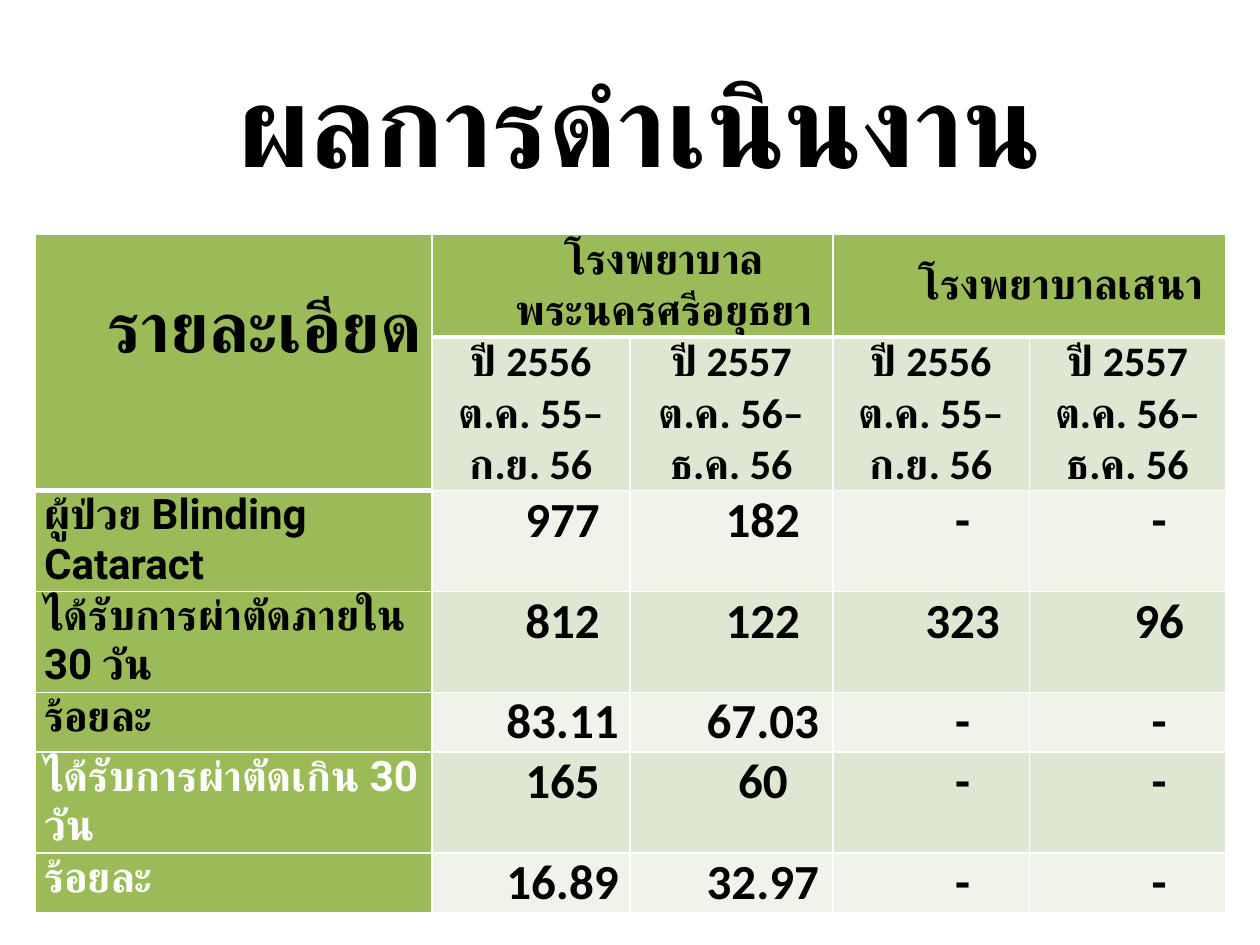
from lxml.etree import SubElement
from pptx import Presentation
from pptx.dml.color import RGBColor
from pptx.enum.text import MSO_ANCHOR, MSO_AUTO_SIZE, PP_ALIGN
from pptx.oxml.ns import qn
from pptx.util import Inches, Pt

COLORS = {"ink": "000000", "white": "FFFFFF", "header": "9BBB59",
          "band_dark": "DEE7D1", "band_light": "EFF3EA"}
INDENT = 0.5
COLUMNS = [3.15, 1.57, 1.61, 1.56, 1.56]
ROWS = [0.79, 1.2, 0.8, 0.8, 0.47, 0.8, 0.47]

HEADING = {"size": 24, "indent": INDENT, "fill": "header"}
PERIOD = {"size": 24, "fill": "band_dark"}
LABEL = {"size": 24, "font": "Roboto", "align": PP_ALIGN.LEFT, "fill": "header"}
VALUE = {"size": 28, "indent": INDENT}

PERIODS = [["ปี 2556", "ต.ค. 55–ก.ย. 56"], ["ปี 2557", "ต.ค. 56–ธ.ค. 56"]] * 2
RESULTS = [
    ("ผู้ป่วย Blinding Cataract", "ink", ["977", "182", "-", "-"]),
    ("ได้รับการผ่าตัดภายใน 30 วัน", "ink", ["812", "122", "323", "96"]),
    ("ร้อยละ", "ink", ["83.11", "67.03", "-", "-"]),
    ("ได้รับการผ่าตัดเกิน 30 วัน", "white", ["165", "60", "-", "-"]),
    ("ร้อยละ", "white", ["16.89", "32.97", "-", "-"]),
]


def rgb(name):
    return RGBColor.from_string(COLORS[name])


def rule_below(row, column):
    """Width in points of the line under a cell; headers end in a heavy one."""
    return 3 if row == (1 if column == 0 else 0) else 1


class SlideBuilder:
    def __init__(self, deck):
        self.deck = deck
        self.slide = deck.slides.add_slide(deck.slide_layouts[5])

    def set_text(self, frame, lines, size, font="Calibri", color="ink",
                 align=PP_ALIGN.CENTER, indent=0):
        frame.text = "\n".join(lines)
        for paragraph in frame.paragraphs:
            paragraph.alignment = align
            properties = paragraph._p.get_or_add_pPr()
            properties.set("marL", str(Inches(indent)))
            properties.set("indent", "0")
            for run in paragraph.runs:
                for name, value in {"size": Pt(size), "bold": True, "name": font}.items():
                    setattr(run.font, name, value)
                run.font.color.rgb = rgb(color)
                # Thai letters take the complex-script typeface
                SubElement(run._r.get_or_add_rPr(), qn("a:cs"), typeface=font)

    def title(self, text, left, top, width, height, **style):
        """Place the title; lengths are shares of the slide."""
        heading = self.slide.shapes.title
        w, h = self.deck.slide_width, self.deck.slide_height
        place = {"left": left * w, "top": top * h, "width": width * w, "height": height * h}
        for name, value in place.items():
            setattr(heading, name, int(value))
        frame = heading.text_frame
        frame.auto_size = MSO_AUTO_SIZE.NONE
        frame.vertical_anchor = MSO_ANCHOR.TOP
        self.set_text(frame, [text], **style)

    def table(self, left, top, columns, rows):
        w, h = self.deck.slide_width, self.deck.slide_height
        frame = self.slide.shapes.add_table(
            len(rows), len(columns), int(left * w), int(top * h),
            Inches(sum(columns)), Inches(sum(rows)))
        self.grid = frame.table
        self.grid.first_row = self.grid.horz_banding = False
        for column, width in zip(self.grid.columns, columns):
            column.width = Inches(width)
        for row, height in zip(self.grid.rows, rows):
            row.height = Inches(height)
        for r in range(len(rows)):
            for c in range(len(columns)):
                self.borders(r, c)

    def borders(self, row, column):
        properties = self.grid.cell(row, column)._tc.get_or_add_tcPr()
        widths = {"L": 1, "R": 1, "T": rule_below(row - 1, column),
                  "B": rule_below(row, column)}
        for side, width in widths.items():
            line = SubElement(properties, qn(f"a:ln{side}"), w=str(Pt(width)))
            fill = SubElement(line, qn("a:solidFill"))
            SubElement(fill, qn("a:srgbClr"), val=COLORS["white"])

    def cell(self, row, column, lines, fill, span=(1, 1), drop=0, **style):
        """Fill one cell; drop is the distance in inches above its text."""
        cell = self.grid.cell(row, column)
        if span != (1, 1):
            cell.merge(self.grid.cell(row + span[0] - 1, column + span[1] - 1))
        margins = {"margin_left": 0.07, "margin_right": 0.07,
                   "margin_top": drop, "margin_bottom": 0}
        for name, value in margins.items():
            setattr(cell, name, Inches(value))
        cell.fill.solid()
        cell.fill.fore_color.rgb = rgb(fill)
        self.set_text(cell.text_frame, lines, **style)


def main():
    deck = Presentation()
    deck.slide_width, deck.slide_height = Inches(10), Inches(7.5)
    page = SlideBuilder(deck)
    page.title("ผลการดำเนินงาน", 0.106, 0.048, 0.803, 0.161, size=66, font="Lato")
    page.table(0.028, 0.248, COLUMNS, ROWS)

    page.cell(0, 0, ["รายละเอียด"], span=(2, 1), drop=0.41,
              **{**HEADING, "size": 40, "align": PP_ALIGN.LEFT})
    page.cell(0, 1, ["โรงพยาบาลพระนครศรีอยุธยา"], span=(1, 2), **HEADING)
    page.cell(0, 3, ["โรงพยาบาลเสนา"], span=(1, 2), drop=0.2, **HEADING)
    for column, period in enumerate(PERIODS, 1):
        page.cell(1, column, period, **PERIOD)

    for row, (label, color, values) in enumerate(RESULTS, 2):
        page.cell(row, 0, [label], color=color, **LABEL)
        band = "band_dark" if row % 2 else "band_light"
        for column, value in enumerate(values, 1):
            page.cell(row, column, [value], fill=band, **VALUE)

    deck.save("out.pptx")


if __name__ == "__main__":
    main()
